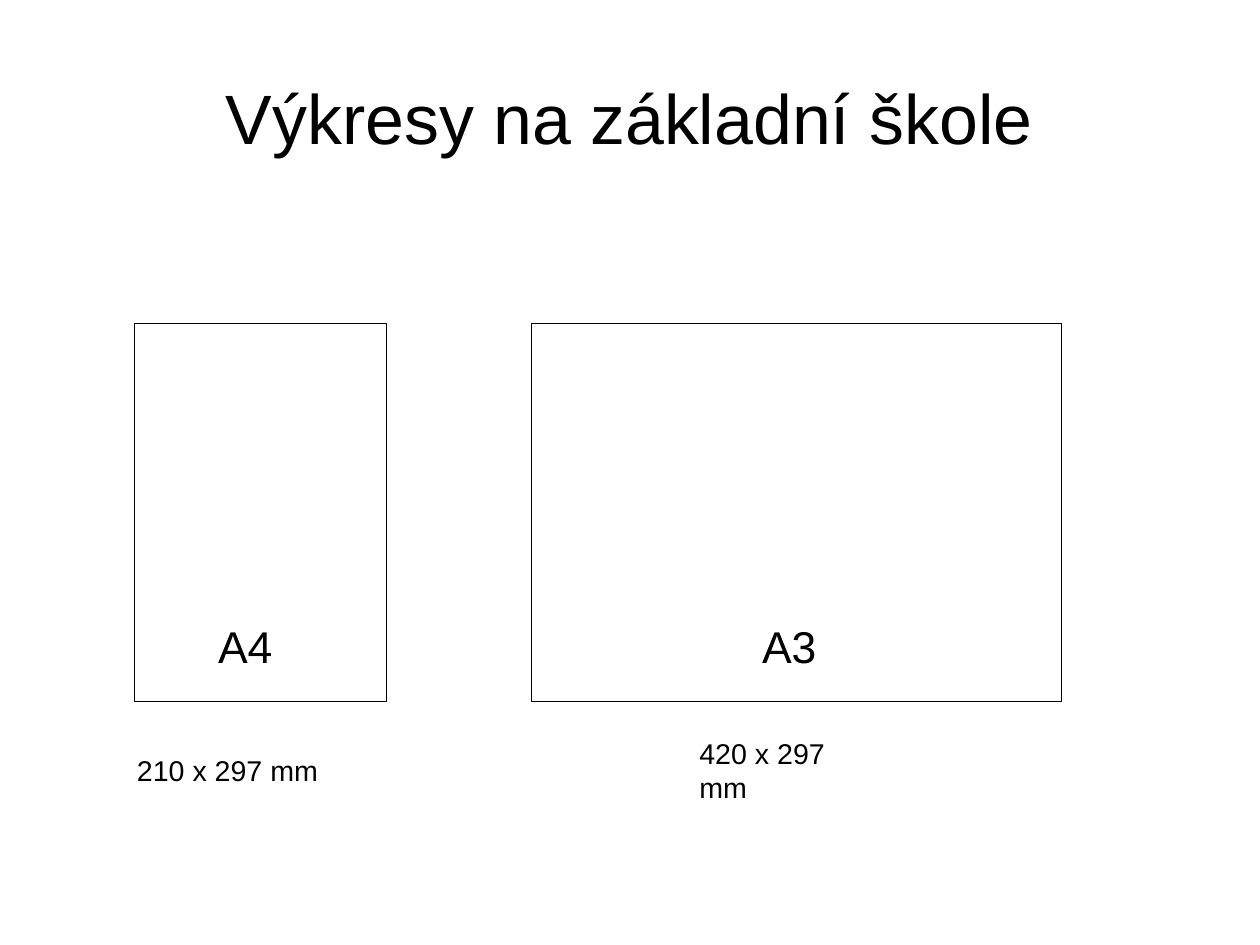
"""Build a slide that compares the A4 and A3 drawing sheets."""
import dataclasses
import pptx
import pptx.dml.color
import pptx.enum.shapes
import pptx.enum.text
import pptx.util

Inches = pptx.util.Inches


@dataclasses.dataclass(frozen=True)
class Theme:
    """Hold the colours, font and type sizes."""
    ink: str = "000000"
    paper: str = "FFFFFF"
    font: str = "Arial"
    title: int = 44
    label: int = 28
    note: int = 18
    line: float = 0.75


THEME = Theme()


def color(code):
    """Return the colour for a hex code."""
    return pptx.dml.color.RGBColor.from_string(code)


def write(slide, box, text, size, pad=(0.1, 0.05), center=False):
    """Place one line of text in a box."""
    shape = slide.shapes.add_textbox(*map(Inches, box))
    frame = shape.text_frame
    frame.word_wrap = True
    frame.margin_left = frame.margin_right = Inches(pad[0])
    frame.margin_top = frame.margin_bottom = Inches(pad[1])
    para = frame.paragraphs[0]
    if center:
        frame.vertical_anchor = pptx.enum.text.MSO_ANCHOR.MIDDLE
        para.alignment = pptx.enum.text.PP_ALIGN.CENTER
    run = para.add_run()
    run.text = text
    run.font.name = THEME.font
    run.font.size = pptx.util.Pt(size)
    run.font.color.rgb = color(THEME.ink)


def head(slide, box, text):
    """Place the centred title."""
    write(slide, box, text, THEME.title, (0, 0), True)


def sheet(slide, box, label, note):
    """Draw a sheet; label and note give text, x and y offset, and width."""
    left, top, wide, high = box
    rect = slide.shapes.add_shape(
        pptx.enum.shapes.MSO_SHAPE.RECTANGLE, *map(Inches, box))
    rect.shadow.inherit = False
    rect.fill.solid()
    rect.fill.fore_color.rgb = color(THEME.paper)
    rect.line.color.rgb = color(THEME.ink)
    rect.line.width = pptx.util.Pt(THEME.line)
    text, dx, dy, span = label
    write(slide, (left + dx, top + dy, span, 0.53), text, THEME.label)
    text, dx, dy, span = note
    write(slide, (left + dx, top + high + dy, span, 0.38), text, THEME.note)


def main():
    """Build and save the slide."""
    deck = pptx.Presentation()
    deck.slide_width = pptx.util.Cm(28)
    deck.slide_height = pptx.util.Cm(21)
    slide = deck.slides.add_slide(deck.slide_layouts[6])
    head(slide, (0.55, 0.33, 9.92, 1.38), "Výkresy na základní škole")
    sheet(slide, (1.18, 2.83, 2.2, 3.31),
          ("A4", 0.63, 2.54, 1.42), ("210 x 297 mm", -0.08, 0.4, 2.36))
    sheet(slide, (4.65, 2.83, 4.64, 3.31),
          ("A3", 1.92, 2.54, 0.7), ("420 x 297 mm", 1.37, 0.25, 1.75))
    deck.save("out.pptx")


if __name__ == "__main__":
    main()
